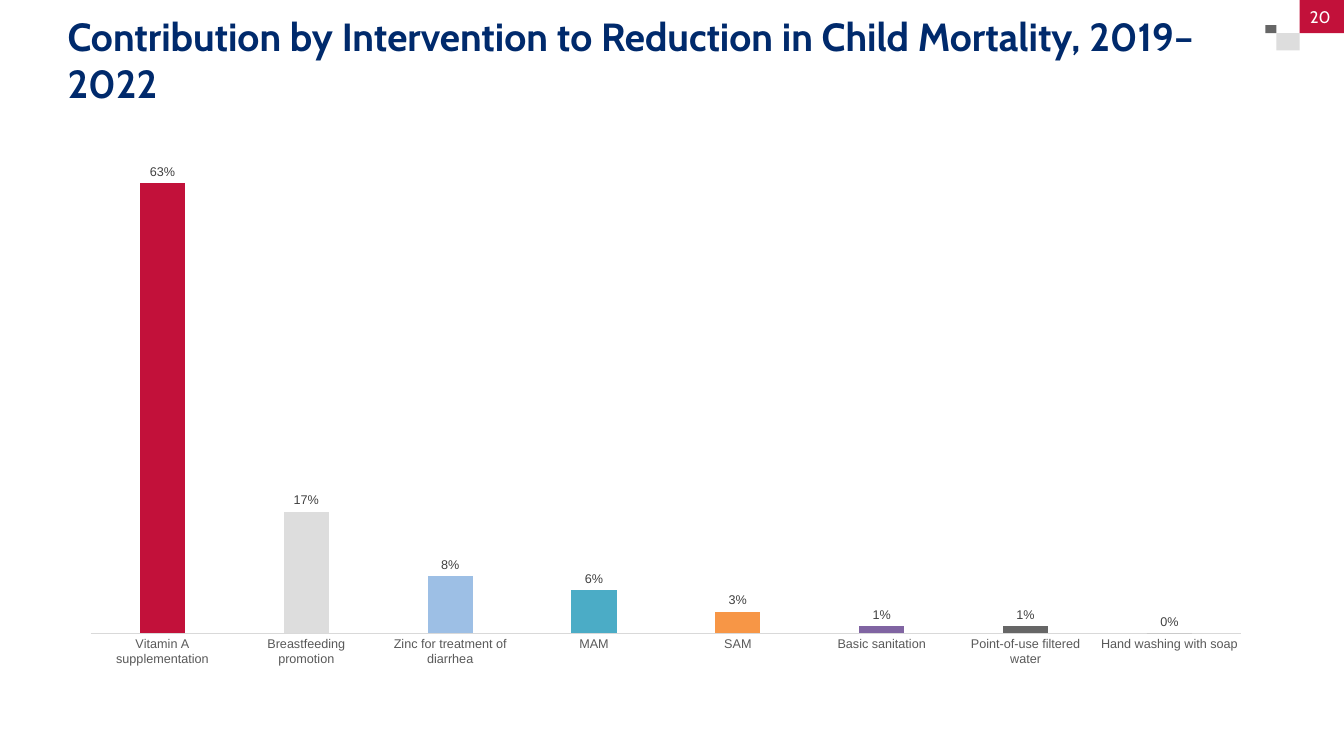
from lxml import etree
from pptx import Presentation
from pptx.chart.data import CategoryChartData
from pptx.dml.color import RGBColor
from pptx.enum.chart import XL_CHART_TYPE as ChartType
from pptx.enum.chart import XL_LABEL_POSITION as LabelPosition
from pptx.enum.chart import XL_TICK_MARK as TickMark
from pptx.enum.shapes import MSO_SHAPE as Shape
from pptx.enum.text import MSO_ANCHOR as Anchor
from pptx.enum.text import MSO_AUTO_SIZE as AutoSize
from pptx.enum.text import PP_ALIGN as Align
from pptx.oxml.ns import qn
from pptx.util import Pt

PX = 9144  # 100 px to the inch

NAVY = RGBColor(0x00, 0x2A, 0x6C)
RED = RGBColor(0xC2, 0x11, 0x3A)
LIGHT_GREY = RGBColor(0xDD, 0xDD, 0xDD)
SKY = RGBColor(0x9D, 0xBF, 0xE5)
TEAL = RGBColor(0x4B, 0xAC, 0xC6)
ORANGE = RGBColor(0xF7, 0x96, 0x46)
PURPLE = RGBColor(0x80, 0x64, 0xA2)
GREY = RGBColor(0x66, 0x66, 0x66)
AXIS_TEXT = RGBColor(0x59, 0x59, 0x59)
AXIS_LINE = RGBColor(0xD9, 0xD9, 0xD9)
LABEL_TEXT = RGBColor(0x40, 0x40, 0x40)
BLACK = RGBColor(0x00, 0x00, 0x00)
WHITE = RGBColor(0xFF, 0xFF, 0xFF)

INTERVENTIONS = [
    ("Vitamin A supplementation", 0.63, RED),
    ("Breastfeeding promotion", 0.17, LIGHT_GREY),
    ("Zinc for treatment of diarrhea", 0.08, SKY),
    ("MAM", 0.06, TEAL),
    ("SAM", 0.03, ORANGE),
    ("Basic sanitation", 0.01, PURPLE),
    ("Point-of-use filtered water", 0.01, GREY),
    ("Hand washing with soap", 0, GREY),
]


def emu(*lengths):
    return [length * PX for length in lengths]


def set_font(font, size, color, name="Arial", bold=False):
    font.size, font.name, font.bold = Pt(size), name, bold
    font.color.rgb = color


def write_text(shape, text, size, color, align=Align.LEFT, bold=False):
    frame = shape.text_frame
    frame.margin_left = frame.margin_right = 0
    frame.margin_top = frame.margin_bottom = 0
    frame.word_wrap = True
    frame.auto_size = AutoSize.NONE
    frame.vertical_anchor = Anchor.MIDDLE
    paragraph = frame.paragraphs[0]
    paragraph.alignment = align
    run = paragraph.add_run()
    run.text = text
    set_font(run.font, size, color, "Cabin", bold)


def add_title(slide, left, top, width, height):
    title = slide.shapes.title
    title.left, title.top, title.width, title.height = emu(left, top, width, height)
    write_text(title, "Contribution by Intervention to Reduction in Child Mortality, 2019–2022",
               28, NAVY, bold=True)


def add_page_corner(slide, left, top):
    """Place the stepped squares and the page number inside the last one."""
    steps = [(0, 25, 11, 8, GREY), (11, 33, 23, 17, LIGHT_GREY), (34, 0, 44, 33, RED)]
    for x, y, width, height, color in steps:
        square = slide.shapes.add_shape(
            Shape.RECTANGLE, *emu(left + x, top + y, width, height))
        square.shadow.inherit = False
        square.fill.solid()
        square.fill.fore_color.rgb = color
        square.line.fill.background()
    page_number = slide.shapes.add_textbox(*emu(left + 34, top, 41, 33))
    write_text(page_number, "20", 12, WHITE, Align.CENTER)


def fix_plot_area(chart, **fractions):
    """Pin the inner plot area to fractions of the chart frame."""
    plot_area = chart._chartSpace.chart.plotArea
    for old_layout in plot_area.findall(qn("c:layout")):
        plot_area.remove(old_layout)
    layout = etree.Element(qn("c:layout"))
    plot_area.insert(0, layout)
    manual = etree.SubElement(layout, qn("c:manualLayout"))
    settings = {"layoutTarget": "inner", "xMode": "edge", "yMode": "edge", **fractions}
    for tag, value in settings.items():
        etree.SubElement(manual, qn(f"c:{tag}")).set("val", str(value))


def add_contribution_chart(slide, left, top, width, height):
    names, shares, colors = zip(*INTERVENTIONS)
    contributions = CategoryChartData(number_format="0%")
    contributions.categories = names
    contributions.add_series("Series 1", shares)
    chart = slide.shapes.add_chart(
        ChartType.COLUMN_CLUSTERED, *emu(left, top, width, height), contributions).chart
    chart.has_legend = chart.has_title = False
    set_font(chart.font, 10, BLACK)
    fix_plot_area(chart, x=0.02, y=0.01, w=0.96, h=0.91)

    plot = chart.plots[0]
    plot.gap_width, plot.overlap = 219, -27
    plot.vary_by_categories = False
    bars = plot.series[0]
    bars.invert_if_negative = False
    bars.format.fill.solid()
    bars.format.fill.fore_color.rgb = GREY
    for index, color in enumerate(colors):
        fill = bars.points[index].format.fill
        fill.solid()
        fill.fore_color.rgb = color

    labels = bars.data_labels
    labels.show_value = True
    labels.position = LabelPosition.OUTSIDE_END
    labels.number_format, labels.number_format_is_linked = "0%", False
    set_font(labels.font, 9, LABEL_TEXT)

    share_axis = chart.value_axis
    share_axis.visible = False
    share_axis.has_major_gridlines = False
    share_axis.minimum_scale, share_axis.maximum_scale = 0, 0.7

    intervention_axis = chart.category_axis
    intervention_axis.major_tick_mark = TickMark.NONE
    intervention_axis.minor_tick_mark = TickMark.NONE
    intervention_axis.format.line.color.rgb = AXIS_LINE
    intervention_axis.format.line.width = Pt(0.75)
    set_font(intervention_axis.tick_labels.font, 9, AXIS_TEXT)


def main():
    deck = Presentation()
    deck.slide_width, deck.slide_height = emu(1333, 750)
    slide = deck.slides.add_slide(deck.slide_layouts[5])
    add_page_corner(slide, 1255, 0)
    add_title(slide, 67, 20, 1189, 78)
    add_contribution_chart(slide, 66, 127, 1189, 545)
    deck.save("out.pptx")


if __name__ == "__main__":
    main()
